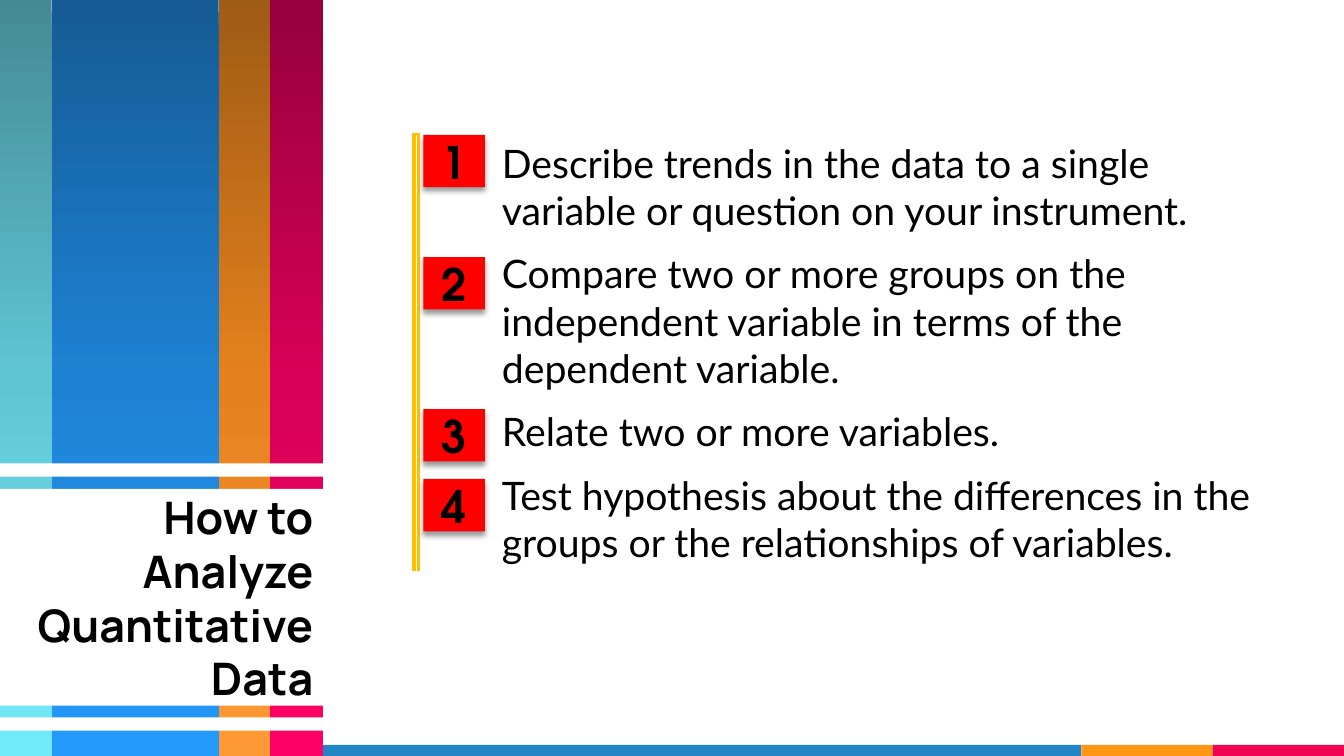
from pptx import Presentation
from pptx.dml.color import RGBColor
from pptx.enum.shapes import MSO_CONNECTOR as Conn, MSO_SHAPE as Shape
from pptx.enum.text import MSO_ANCHOR as Anchor, PP_ALIGN as Align
from pptx.oxml import parse_xml
from pptx.oxml.ns import nsdecls
from pptx.util import Cm, Pt

FOOT = [(0, 3.3, "7ECEFD"), (3.3, 23.95, "2185C5"),
        (27.25, 3.31, "FF9715"), (30.56, 3.31, "F20253")]
STRIPES = [(0, 1.3, ["448A94", "60C5D3", "72EAFA"]),
           (1.3, 4.21, ["155B95", "1E82D4", "249AFC"]),
           (5.51, 1.3, ["A05B15", "E4811E", "FF9933"]),
           (6.81, 1.34, ["97003C", "D70056", "FF0066"])]
STEPS = ["Describe trends in the data to a single variable or question on your instrument.",
         "Compare two or more groups on the independent variable in terms of the dependent variable.",
         "Relate two or more variables.",
         "Test hypothesis about the differences in the groups or the relationships of variables."]
TOPS = [3.4, 6.48, 10.31, 12.07]
SIDE = 8.15


def color(text):
    return RGBColor.from_string(text)


def style(para, face, size, bold=False):
    font = para.font
    font.name, font.size, font.bold = face, Pt(size), bold
    font.color.rgb = color("000000")


def box(slide, left, top, width, height, fill=None):
    shape = slide.shapes.add_shape(Shape.RECTANGLE, Cm(left), Cm(top), Cm(width), Cm(height))
    shape.shadow.inherit = False
    shape.line.fill.background()
    if fill:
        shape.fill.solid()
        shape.fill.fore_color.rgb = color(fill)
    return shape


def label(shape, text, face, align):
    frame = shape.text_frame
    frame.word_wrap = True
    frame.vertical_anchor = Anchor.MIDDLE
    para = frame.paragraphs[0]
    para.alignment = align
    style(para, face, 32, True)
    run = para.add_run()
    run.text = text
    return run


def stripe(slide, left, width, tones):
    shape = box(slide, left, 0, width, 19.05)
    stops = "".join(f'<a:gs pos="{i * 50000}"><a:srgbClr val="{tone}"/></a:gs>'
                    for i, tone in enumerate(tones))
    shape.element.spPr.insert(2, parse_xml(
        f'<a:gradFill {nsdecls("a")}><a:gsLst>{stops}</a:gsLst>'
        '<a:lin ang="5400000" scaled="0"/></a:gradFill>'))


def badge(slide, top, text):
    shape = box(slide, 10.67, top, 1.55, 1.32, "FF0000")
    shape.element.spPr.find("{*}effectLst").append(parse_xml(
        f'<a:outerShdw {nsdecls("a")} blurRad="50800" dist="38100" dir="5400000" algn="t" '
        'rotWithShape="0"><a:srgbClr val="000000"><a:alpha val="40000"/></a:srgbClr></a:outerShdw>'))
    run = label(shape, text, "TeX Gyre Adventor", Align.CENTER)
    run.font.element.insert(0, parse_xml(
        f'<a:ln {nsdecls("a")} w="9525"><a:solidFill><a:srgbClr val="FFFFFF"/></a:solidFill></a:ln>')) \
        if hasattr(run.font, "element") else run._r.get_or_add_rPr().insert(0, parse_xml(
            f'<a:ln {nsdecls("a")} w="9525"><a:solidFill><a:srgbClr val="FFFFFF"/></a:solidFill></a:ln>'))


def rule(slide, top, end, tone, width):
    line = slide.shapes.add_connector(Conn.STRAIGHT, Cm(10.49), Cm(top), Cm(10.49), Cm(end))
    line.line.color.rgb = color(tone)
    line.line.width = Pt(width)
    line.element.spPr.append(parse_xml(f'<a:effectLst {nsdecls("a")}/>'))


def steps(slide):
    frame = slide.shapes.add_textbox(Cm(12.4), Cm(3.25), Cm(20.02), Cm(13.13)).text_frame
    frame.word_wrap = True
    frame.margin_left = frame.margin_right = Cm(0.25)
    frame.margin_top = frame.margin_bottom = Cm(0.25)
    for i, text in enumerate(STEPS):
        para = frame.add_paragraph() if i else frame.paragraphs[0]
        para.text = text
        para.space_after = Pt(12)
        style(para, "Lato", 28)


def main():
    deck = Presentation()
    deck.slide_width, deck.slide_height = Cm(33.87), Cm(19.05)
    slide = deck.slides.add_slide(deck.slide_layouts[6])
    for left, width, fill in FOOT:
        box(slide, left, 18.77, width, 0.28, fill)
    for left, width, tones in STRIPES:
        stripe(slide, left, width, tones)
    title = box(slide, 0, 12.32, SIDE, 5.46, "FFFFFF")
    label(title, "How to Analyze Quantitative Data", "Manrope", Align.RIGHT)
    for top in (11.68, 18.08):
        box(slide, 0, top, SIDE, 0.33, "FFFFFF")
    steps(slide)
    rule(slide, 3.35, 14.4, "FFC000", 6)
    rule(slide, 3.4, 15.06, "FFFFFF", 0.75)
    for i, top in enumerate(TOPS, 1):
        badge(slide, top, str(i))
    deck.save("out.pptx")


if __name__ == "__main__":
    main()
